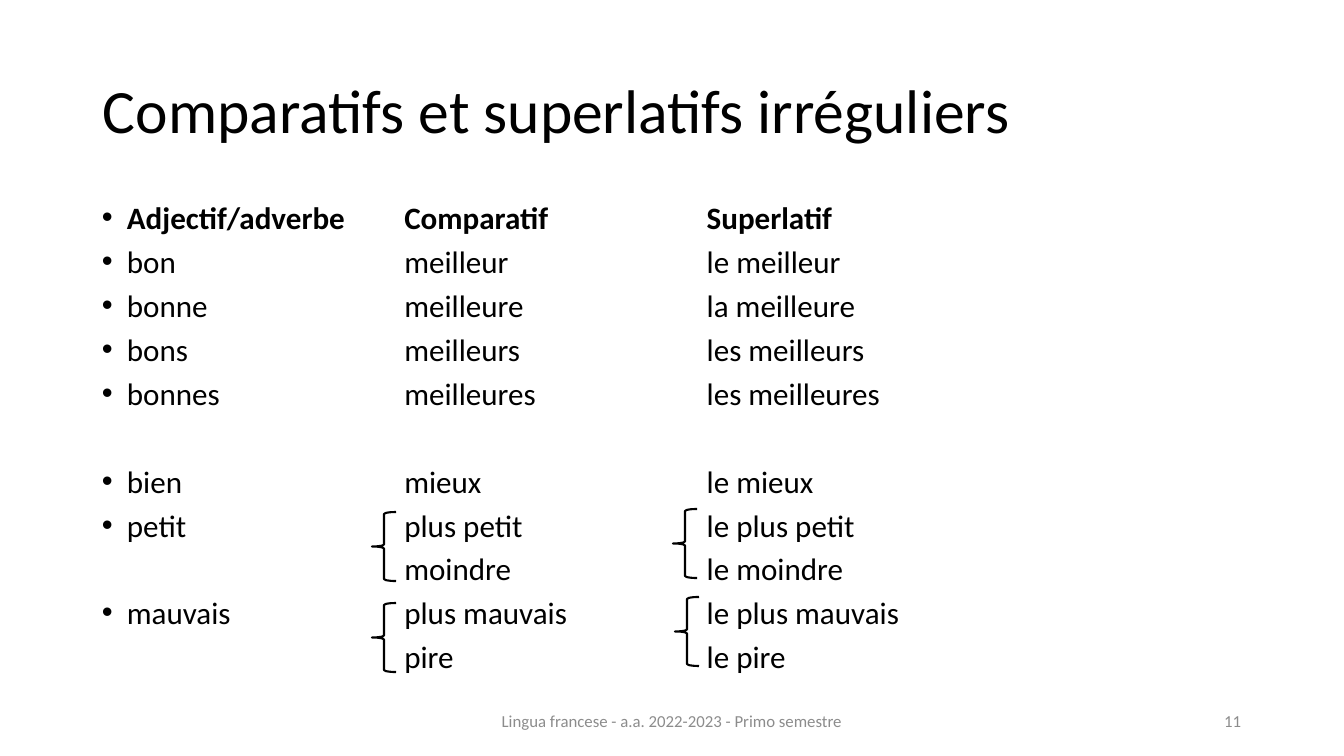
from lxml.etree import SubElement
from pptx import Presentation
from pptx.dml.color import RGBColor
from pptx.enum.shapes import MSO_SHAPE as Shape
from pptx.enum.text import MSO_ANCHOR as Anchor, PP_ALIGN as Align
from pptx.oxml.ns import qn
from pptx.util import Inches, Pt

# Content: columns sit on one-inch tab stops
TITLE = "Comparatifs et superlatifs irréguliers"
HEADER = "Adjectif/adverbe\tComparatif\t\tSuperlatif"
REGULAR_GROUP = [
    "bon\t\t\tmeilleur\t\tle meilleur",
    "bonne\t\tmeilleure\t\tla meilleure",
    "bons\t\t\tmeilleurs\t\tles meilleurs",
    "bonnes\t\tmeilleures\t\tles meilleures",
]
VARIANT_GROUP = [
    "bien\t\t\tmieux\t\t\tle mieux",
    "petit\t\t\tplus petit\t\tle plus petit",
    "\t\t\tmoindre\t\tle moindre",
    "mauvais\t\tplus mauvais\t\tle plus mauvais",
    "\t\t\tpire\t\t\tle pire",
]
FOOTER = "Lingua francese - a.a. 2022-2023 - Primo semestre"
PAGE_NUMBER = "11"

# Geometry in px
PAGE_WIDTH, PAGE_HEIGHT = 1344, 756
TITLE_BOX = (93, 41, 1159, 146)
BODY_BOX = (92, 201, 1187, 495)
FOOTER_BOX = (445, 701, 454, 40)
NUMBER_BOX = (949, 701, 302, 40)
BRACE_CORNERS = [(372, 512), (673, 509), (372, 603), (675, 597)]
BRACE_SIZE = (24, 69)
BULLET_INDENT = 25

FONT = "Calibri"
BLACK = RGBColor(0x00, 0x00, 0x00)
GREY = RGBColor(0x8C, 0x8C, 0x8C)
ROW_GAP, GROUP_GAP = 10, 41.5
TAB_STEP = Inches(1)


def px(length):
    return round(length * 12192000 / PAGE_WIDTH)


def add_box(page, place, anchor=Anchor.MIDDLE):
    box = page.shapes.add_textbox(*map(px, place))
    box.text_frame.word_wrap = True
    box.text_frame.vertical_anchor = anchor
    return box.text_frame


def write(para, text, size, color=BLACK, bold=False, align=Align.LEFT,
          spacing=1.0, before=0, bullet=False):
    para.alignment = align
    para.line_spacing = spacing
    para.space_before = Pt(before)
    span = para.add_run()
    span.text = text
    span.font.name = FONT
    span.font.size = Pt(size)
    span.font.bold = bold
    span.font.color.rgb = color
    props = para._p.get_or_add_pPr()
    props.set("defTabSz", str(TAB_STEP))
    if bullet:
        props.set("marL", str(px(BULLET_INDENT)))
        props.set("indent", str(-px(BULLET_INDENT)))
        SubElement(props, qn("a:buFont")).set("typeface", "Arial")
        SubElement(props, qn("a:buChar")).set("char", "•")


deck = Presentation()
deck.slide_width, deck.slide_height = px(PAGE_WIDTH), px(PAGE_HEIGHT)
page = deck.slides.add_slide(deck.slide_layouts[6])

# Title
write(add_box(page, TITLE_BOX).paragraphs[0], TITLE, 44, spacing=0.9)

# Word list: rows that open with a tab continue the row above
body = add_box(page, BODY_BOX, Anchor.TOP)
for index, row in enumerate([HEADER] + REGULAR_GROUP + VARIANT_GROUP):
    para = body.add_paragraph() if index else body.paragraphs[0]
    write(para, row, 22.2, bold=row == HEADER, spacing=0.8,
          before=GROUP_GAP if row == VARIANT_GROUP[0] else ROW_GAP,
          bullet=not row.startswith("\t"))

# Footer and page number
for place, text, align in [(FOOTER_BOX, FOOTER, Align.CENTER),
                           (NUMBER_BOX, PAGE_NUMBER, Align.RIGHT)]:
    write(add_box(page, place).paragraphs[0], text, 12, color=GREY, align=align)

# Braces around the paired forms
for corner in BRACE_CORNERS:
    brace = page.shapes.add_shape(Shape.LEFT_BRACE, *map(px, corner + BRACE_SIZE))
    brace.shadow.inherit = False
    brace.fill.background()
    brace.line.color.rgb = BLACK
    brace.line.width = Pt(1.5)

deck.save("out.pptx")
